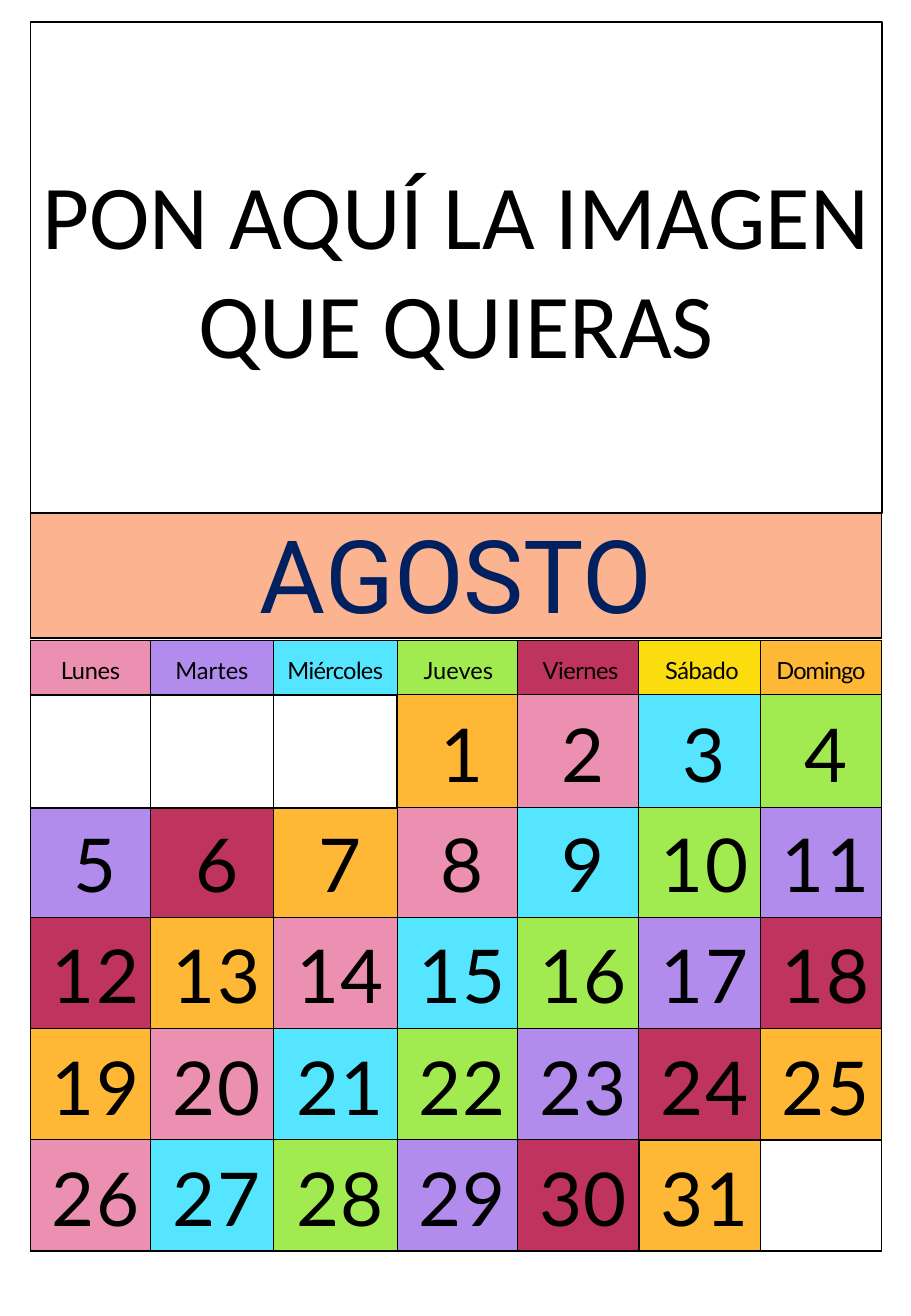
from dataclasses import dataclass

from lxml.etree import SubElement
from pptx import Presentation
from pptx.dml.color import RGBColor
from pptx.enum.shapes import MSO_SHAPE
from pptx.enum.text import MSO_ANCHOR, PP_ALIGN
from pptx.oxml.ns import qn
from pptx.util import Pt


@dataclass(frozen=True)
class Theme:
    ink: str = "000000"
    paper: str = "FFFFFF"
    navy: str = "002060"
    peach: str = "FBB390"
    pink: str = "EB90B0"
    purple: str = "B18CEC"
    cyan: str = "55E5FF"
    green: str = "A1EB51"
    crimson: str = "BE345E"
    yellow: str = "FBDD0D"
    orange: str = "FFB836"
    picture_font: str = "Calibri"
    month_font: str = "Roboto"
    grid_font: str = "Lato"
    picture_size: float = 54
    month_size: float = 60
    weekday_size: float = 14
    day_size: float = 44
    thin: float = 0.75
    thick: float = 1


THEME = Theme()

# Name, fill, letter spacing, left indent
WEEKDAYS = [
    ("Lunes", THEME.pink, -0.2, 0),
    ("Martes", THEME.purple, 0, 0),
    ("Miércoles", THEME.cyan, -0.4, 0),
    ("Jueves", THEME.green, 0, 1.4),
    ("Viernes", THEME.crimson, -0.3, 2.9),
    ("Sábado", THEME.yellow, -0.3, 2.9),
    ("Domingo", THEME.orange, -0.6, 0),
]
DAY_FILLS = [THEME.orange, THEME.pink, THEME.cyan,
             THEME.green, THEME.purple, THEME.crimson]
FIRST_COLUMN, LAST_DAY = 3, 31
COLUMN_WIDTHS = [71.3, 72.7, 73.4, 71.3, 72, 72, 72]
ROW_HEIGHTS = [32.3, 67, 65.2, 65.8, 65.8, 65.8]
TOP_INSETS = [3.6, 2.9, 1.4, 2.2, 2.2, 2.2]


def style_paragraph(para, font_name, size, color):
    para.alignment = PP_ALIGN.CENTER
    para.font.name = font_name
    para.font.size = Pt(size)
    para.font.color.rgb = RGBColor.from_string(color)


def write_cell(cell, text, font_name, size, color,
               top=3.6, before=4.2, indent=0, spacing=0):
    cell.vertical_anchor = MSO_ANCHOR.MIDDLE
    cell.margin_left = cell.margin_right = cell.margin_bottom = 0
    cell.margin_top = Pt(top)
    para = cell.text_frame.paragraphs[0]
    span = para.add_run()
    span.text = text
    style_paragraph(para, font_name, size, color)
    para.space_before = Pt(before)
    para._p.get_or_add_pPr().set("marL", str(Pt(indent)))
    span._r.get_or_add_rPr().set("spc", str(round(spacing * 100)))


def paint_cell(cell, fill, left, right, top, bottom):
    """Fill a cell and draw its four borders with the given widths."""
    properties = cell._tc.get_or_add_tcPr()
    for side, width in zip("LRTB", (left, right, top, bottom)):
        line = SubElement(properties, qn(f"a:ln{side}"), w=str(Pt(width)))
        solid = SubElement(line, qn("a:solidFill"))
        SubElement(solid, qn("a:srgbClr"), val=THEME.ink)
    cell.fill.solid()
    cell.fill.fore_color.rgb = RGBColor.from_string(fill)


def add_plain_table(page, left, top, widths, heights):
    frame = page.shapes.add_table(len(heights), len(widths), Pt(left), Pt(top),
                                  Pt(sum(widths)), Pt(sum(heights)))
    table = frame.table
    table.first_row = table.horz_banding = False
    for column, width in zip(table.columns, widths):
        column.width = Pt(width)
    for row, height in zip(table.rows, heights):
        row.height = Pt(height)
    return table


def add_picture_area(page, left, top, width, height):
    box = page.shapes.add_shape(MSO_SHAPE.RECTANGLE, Pt(left), Pt(top),
                                Pt(width), Pt(height))
    box.shadow.inherit = False
    box.fill.solid()
    box.fill.fore_color.rgb = RGBColor.from_string(THEME.paper)
    box.line.color.rgb = RGBColor.from_string(THEME.ink)
    box.line.width = Pt(THEME.thick)
    box.text_frame.word_wrap = True
    box.text_frame.vertical_anchor = MSO_ANCHOR.MIDDLE
    para = box.text_frame.paragraphs[0]
    para.text = "PON AQUÍ LA IMAGEN QUE QUIERAS"
    style_paragraph(para, THEME.picture_font, THEME.picture_size, THEME.ink)


def add_month_banner(page, left, top, width, height):
    cell = add_plain_table(page, left, top, [width], [height]).cell(0, 0)
    write_cell(cell, "AGOSTO", THEME.month_font, THEME.month_size, THEME.navy)
    paint_cell(cell, THEME.peach, THEME.thin, THEME.thin, THEME.thin, THEME.thick)


def add_day_grid(page, left, top):
    table = add_plain_table(page, left, top, COLUMN_WIDTHS, ROW_HEIGHTS)

    def day_at(row, column):
        return (row - 1) * len(WEEKDAYS) + column - FIRST_COLUMN + 1

    def is_outlined(row, column):
        inside = 1 <= row < len(ROW_HEIGHTS) and 0 <= column < len(WEEKDAYS)
        return inside and not 1 <= day_at(row, column) < LAST_DAY

    def border(row, column, row_step, column_step):
        heavy = (is_outlined(row, column)
                 or is_outlined(row + row_step, column + column_step))
        return THEME.thick if heavy else THEME.thin

    for row in range(len(ROW_HEIGHTS)):
        for column, (name, fill, spacing, indent) in enumerate(WEEKDAYS):
            cell = table.cell(row, column)
            day = day_at(row, column)
            if row == 0:
                write_cell(cell, name, THEME.grid_font, THEME.weekday_size,
                           THEME.ink, TOP_INSETS[row], 4.2, indent, spacing)
            elif 1 <= day <= LAST_DAY:
                fill = DAY_FILLS[(day - 1) % len(DAY_FILLS)]
                write_cell(cell, str(day), THEME.grid_font, THEME.day_size,
                           THEME.ink, TOP_INSETS[row], 4.8, 5.8, 1)
            else:
                fill = THEME.paper
            paint_cell(cell, fill,
                       border(row, column, 0, -1), border(row, column, 0, 1),
                       border(row, column, -1, 0), border(row, column, 1, 0))


def main():
    deck = Presentation()
    deck.slide_width, deck.slide_height = Pt(540), Pt(779.76)
    page = deck.slides.add_slide(deck.slide_layouts[6])
    left, width = 18, sum(COLUMN_WIDTHS)
    # Month name, calendar and space for the picture
    add_month_banner(page, left, 304, width, 74)
    add_day_grid(page, left, 379.4)
    add_picture_area(page, left, 13, width, 291)
    deck.save("out.pptx")


if __name__ == "__main__":
    main()
